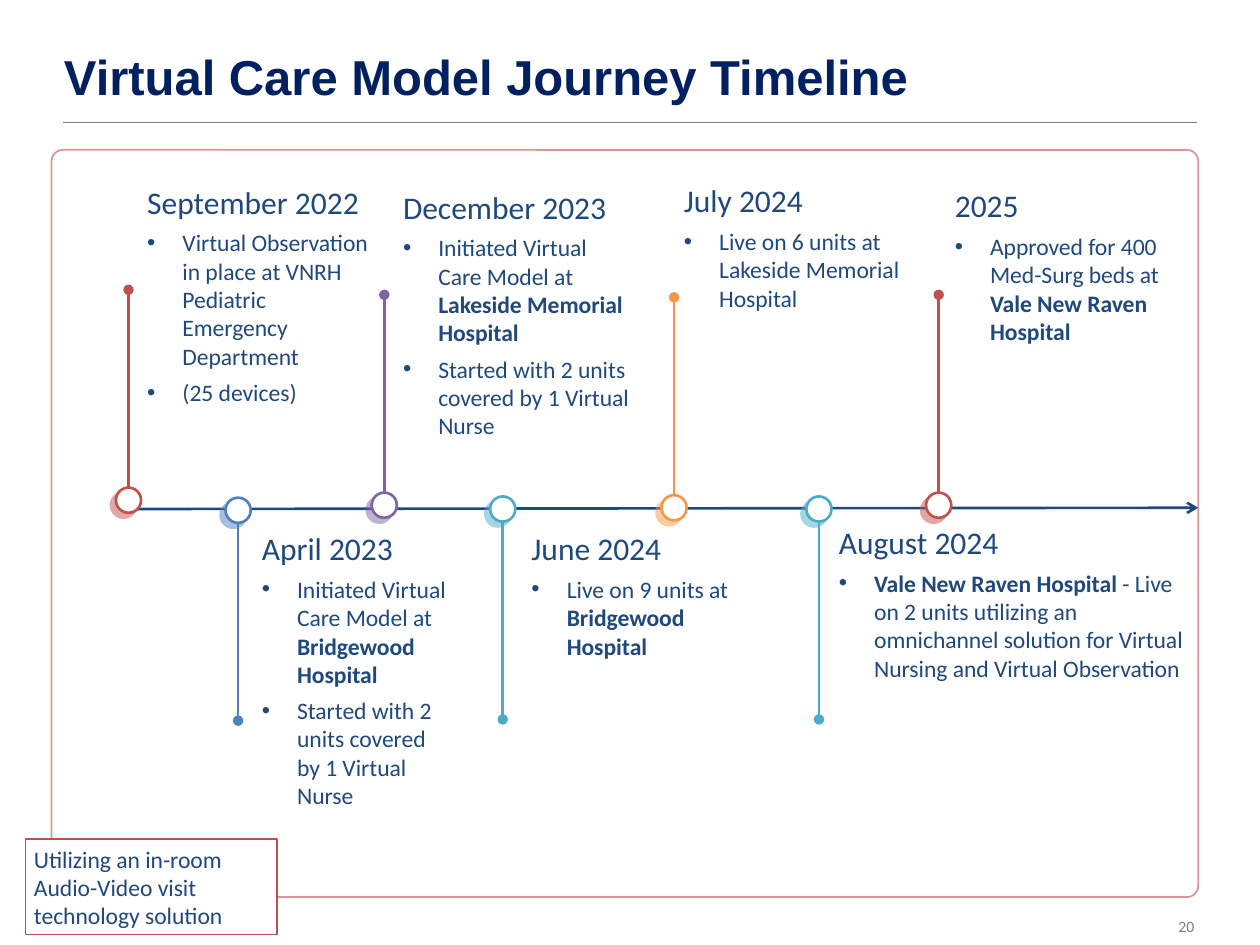
"""Builds a one-slide timeline of the virtual care model."""
from lxml import etree
from pptx import Presentation
from pptx.dml.color import RGBColor
from pptx.enum.shapes import MSO_CONNECTOR, MSO_SHAPE
from pptx.enum.text import MSO_ANCHOR, PP_ALIGN
from pptx.oxml.ns import qn
from pptx.util import Inches, Pt

STRAIGHT = MSO_CONNECTOR.STRAIGHT
ROUNDED, RECTANGLE = MSO_SHAPE.ROUNDED_RECTANGLE, MSO_SHAPE.RECTANGLE
MIDDLE, RIGHT = MSO_ANCHOR.MIDDLE, PP_ALIGN.RIGHT

NAVY, BLUE, GREY, WHITE = "002060", "1F497D", "808080", "FFFFFF"
RED, PURPLE, ORANGE, TEAL, AZURE = "C0504D", "8064A2", "F79646", "4BACC6", "4F81BD"
PINK = "D99694"
NODE, STEM, INDENT = 0.2, 1.57, 0.28

TITLE = "Virtual Care Model Journey Timeline"
NOTE = ["Utilizing an in-room", "Audio-Video visit technology solution"]
PAGE = "20"
STARTED = [("Started with 2 units covered by 1 Virtual Nurse", False)]

# date, colour, direction, node centre x, node top, text box, bullets of (text, bold) runs
MILESTONES = [
    ("September 2022", RED, "up", 1.02, 3.87, (1.07, 1.4, 1.97, 2.81),
     [[("Virtual Observation in place at VNRH Pediatric Emergency Department", False)],
      [("(25 devices)", False)]]),
    ("April 2023", AZURE, "down", 1.89, 3.95, (1.98, 4.15, 1.7, 3.03),
     [[("Initiated Virtual Care Model at ", False), ("Bridgewood Hospital", True)], STARTED]),
    ("December 2023", PURPLE, "up", 3.05, 3.91, (3.1, 1.44, 1.99, 2.51),
     [[("Initiated Virtual Care Model at ", False), ("Lakeside Memorial Hospital", True)],
      STARTED]),
    ("June 2024", TEAL, "down", 3.99, 3.94, (4.12, 4.15, 1.86, 1.16),
     [[("Live on 9 units at ", False), ("Bridgewood Hospital", True)]]),
    ("July 2024", ORANGE, "up", 5.35, 3.93, (5.33, 1.39, 2.04, 1.16),
     [[("Live on 6 units at Lakeside Memorial Hospital", False)]]),
    ("August 2024", TEAL, "down", 6.5, 3.94, (6.56, 4.1, 2.96, 1.38),
     [[("Vale New Raven Hospital ", True),
       ("- Live on 2 units utilizing an omnichannel solution for Virtual Nursing "
        "and Virtual Observation", False)]]),
    ("2025", RED, "up", 7.45, 3.91, (7.48, 1.43, 1.99, 1.76),
     [[("Approved for 400 Med-Surg beds at ", False), ("Vale New Raven Hospital", True)]]),
]


def rgb(value):
    return RGBColor.from_string(value)


def child(parent, tag, **attributes):
    return etree.SubElement(parent, qn(tag), attributes)


def style(font, size, color, bold=False, name="Calibri"):
    font.name, font.size, font.bold = name, Pt(size), bold
    font.color.rgb = rgb(color)


def add_line(slide, start, end, color, width, head=None):
    line = slide.shapes.add_connector(STRAIGHT, *map(Inches, start + end))
    line.line.color.rgb = rgb(color)
    line.line.width = Pt(width)
    if head:
        child(line.line._get_or_add_ln(), "a:tailEnd", type=head)
    child(line._element.spPr, "a:effectLst")


def add_box(slide, kind, place, color, width, corner=None):
    box = slide.shapes.add_shape(kind, *map(Inches, place))
    box.shadow.inherit = False
    box.fill.solid()
    box.fill.fore_color.rgb = rgb(WHITE)
    box.line.color.rgb = rgb(color)
    box.line.width = Pt(width)
    if corner is not None:
        box.adjustments[0] = corner
    return box


def add_text(slide, place):
    frame = slide.shapes.add_textbox(*map(Inches, place)).text_frame
    frame.word_wrap = True
    return frame


def add_node(slide, center, top, color):
    node = add_box(slide, ROUNDED, (center - NODE / 2, top, NODE, NODE), color, 1.5, 0.5)
    effects = node._element.spPr.find(qn("a:effectLst"))
    shadow = child(effects, "a:outerShdw", blurRad="0", dist=str(Pt(4)),
                   dir=str(135 * 60000), algn="tr", rotWithShape="0")
    child(child(shadow, "a:srgbClr", val=color), "a:alpha", val="50000")


def add_bullet(frame, runs):
    paragraph = frame.add_paragraph()
    paragraph.space_after = Pt(4.5)
    properties = paragraph._p.get_or_add_pPr()
    properties.set("marL", str(Inches(INDENT)))
    properties.set("indent", str(-Inches(INDENT)))
    child(properties, "a:buFont", typeface="Arial")
    child(properties, "a:buChar", char="•")
    for text, bold in runs:
        run = paragraph.add_run()
        run.text = text
        style(run.font, 13.5, BLUE, bold)


def add_milestone(slide, date, color, direction, center, top, place, bullets):
    start, end = (top, top - STEM) if direction == "up" else (top + NODE, top + NODE + STEM)
    add_line(slide, (center, start), (center, end), color, 1.5, "oval")
    add_node(slide, center, top, color)
    frame = add_text(slide, place)
    frame.text = date
    heading = frame.paragraphs[0]
    heading.space_after = Pt(4.5)
    style(heading.runs[0].font, 18, BLUE)
    for runs in bullets:
        add_bullet(frame, runs)


def main():
    deck = Presentation()
    deck.slide_width, deck.slide_height = Inches(10), Inches(7.5)
    slide = deck.slides.add_slide(deck.slide_layouts[6])

    add_line(slide, (0.5, 0.97), (9.5, 0.97), GREY, 0.75)
    add_box(slide, ROUNDED, (0.41, 1.19, 9.1, 5.93), PINK, 1, 0.015)

    title = add_text(slide, (0.41, 0.29, 9.1, 0.62))
    title.vertical_anchor = MIDDLE
    title.text = TITLE
    style(title.paragraphs[0].runs[0].font, 28, NAVY, True, "Arial")

    add_line(slide, (1.01, 4.04), (9.51, 4.03), BLUE, 1.5, "arrow")
    for milestone in MILESTONES:
        add_milestone(slide, *milestone)

    note = add_box(slide, RECTANGLE, (0.2, 6.66, 2, 0.76), RED, 0.75).text_frame
    note.word_wrap = True
    note.margin_left = note.margin_right = Inches(0.07)
    note.margin_top = note.margin_bottom = Inches(0.04)
    note.text = "\n".join(NOTE)
    for paragraph in note.paragraphs:
        paragraph.alignment = PP_ALIGN.LEFT
        style(paragraph.runs[0].font, 13.5, BLUE)

    page = add_text(slide, (5.68, 7.23, 4.3, 0.25))
    page.margin_right = Inches(0.5)
    page.text = PAGE
    page.paragraphs[0].alignment = RIGHT
    style(page.paragraphs[0].runs[0].font, 9, GREY)

    deck.save("out.pptx")


if __name__ == "__main__":
    main()
